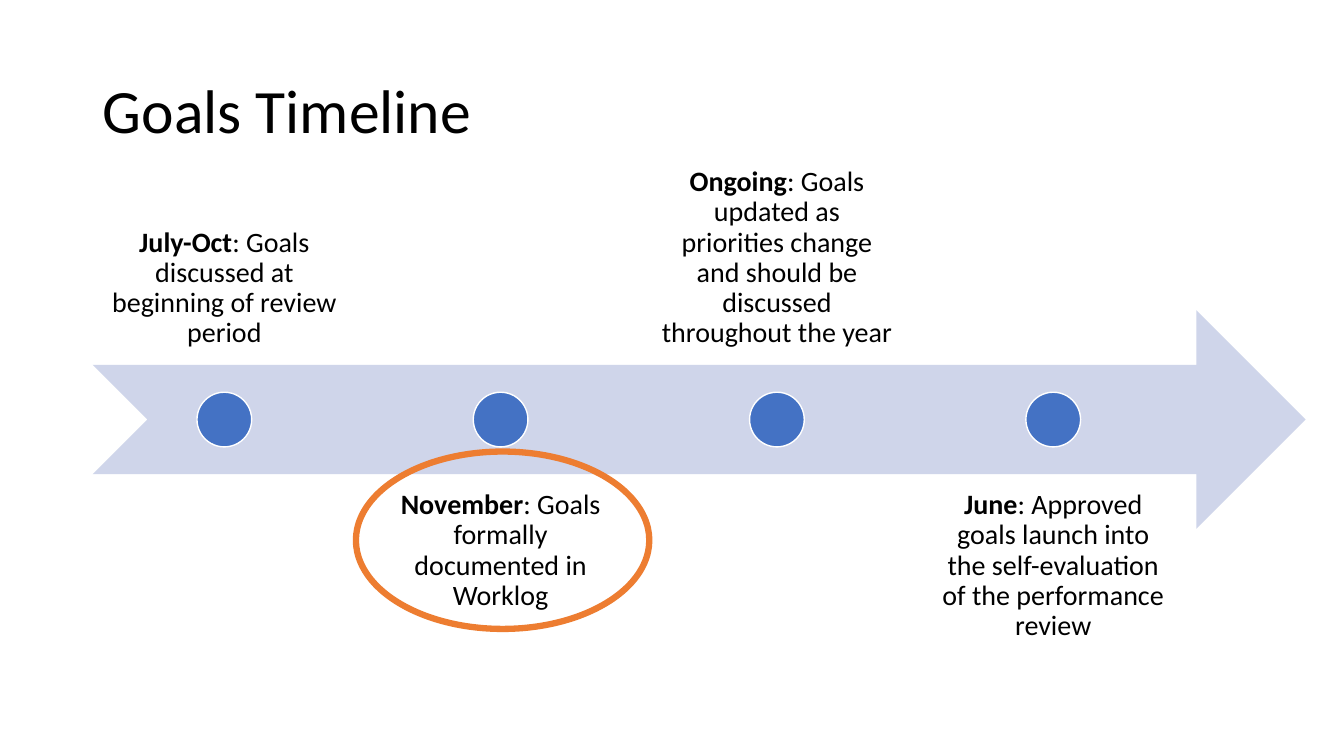
"""Builds the Goals Timeline slide: an arrow with four milestones."""
from pptx import Presentation
from pptx.dml.color import RGBColor
from pptx.enum.shapes import MSO_SHAPE
from pptx.enum.text import MSO_ANCHOR, PP_ALIGN
from pptx.util import Inches, Pt

ARROW, OVAL = MSO_SHAPE.NOTCHED_RIGHT_ARROW, MSO_SHAPE.OVAL
TOP, MIDDLE, BOTTOM = MSO_ANCHOR.TOP, MSO_ANCHOR.MIDDLE, MSO_ANCHOR.BOTTOM
LEFT, CENTER = PP_ALIGN.LEFT, PP_ALIGN.CENTER

COLORS = {"text": "000000", "arrow": "CFD5EA", "dot": "4472C4",
          "dot_line": "FFFFFF", "highlight": "ED7D31"}
FONT = "Calibri"
GRID_X, GRID_Y = 0.92, 1.45
COL_W, ROW_H = 2.61, 2.17
PITCH = COL_W * 1.05
ROW_STEP = ROW_H * 0.75
DOT = ROW_H / 4
INSET = 0.16

MILESTONES = [
    ("July-Oct", ": Goals discussed at beginning of review period"),
    ("November", ": Goals formally documented in Worklog"),
    ("Ongoing", ": Goals updated as priorities change and should be "
                "discussed throughout the year"),
    ("June", ": Approved goals launch into the self-evaluation of the "
             "performance review"),
]


def rgb(name):
    """Return the named colour."""
    return RGBColor.from_string(COLORS[name])


def place(sp, x, y, w, h):
    """Move and size a shape in inches."""
    sp.left, sp.top, sp.width, sp.height = map(Inches, (x, y, w, h))


def write(tf, runs, size, anchor, align):
    """Write (text, bold) runs as one paragraph."""
    tf.word_wrap = True
    tf.vertical_anchor = anchor
    p = tf.paragraphs[0]
    p.alignment = align
    p.line_spacing = 0.9
    for text, bold in runs:
        r = p.add_run()
        r.text = text
        r.font.name = FONT
        r.font.size = Pt(size)
        r.font.bold = bold
        r.font.color.rgb = rgb("text")


def add_title(s, text):
    """Fill and format the title placeholder."""
    sp = s.shapes.title
    place(sp, GRID_X, 0.4, 11.5, 1.45)
    write(sp.text_frame, [(text, False)], 44, MIDDLE, LEFT)


def add_figure(s, kind, box, fill=None, line=None, width=1):
    """Add a preset shape with an optional fill and outline."""
    sp = s.shapes.add_shape(kind, *map(Inches, box))
    sp.shadow.inherit = False
    if fill:
        sp.fill.solid()
        sp.fill.fore_color.rgb = rgb(fill)
    else:
        sp.fill.background()
    if line:
        sp.line.color.rgb = rgb(line)
        sp.line.width = Pt(width)
    else:
        sp.line.fill.background()


def add_milestone(s, col, label, detail):
    """Add a dot with its text, above or below the arrow by turns."""
    x = GRID_X + col * PITCH
    below = col % 2 == 1
    y = GRID_Y + (2 * ROW_STEP if below else 0)
    tb = s.shapes.add_textbox(*map(Inches, (x, y, COL_W, ROW_H)))
    tf = tb.text_frame
    tf.margin_left = tf.margin_right = Inches(INSET)
    tf.margin_top = tf.margin_bottom = Inches(INSET)
    write(tf, [(label, True), (detail, False)], 20,
          TOP if below else BOTTOM, CENTER)
    dot_y = GRID_Y + ROW_STEP + (ROW_H - DOT) / 2
    add_figure(s, OVAL, (x + (COL_W - DOT) / 2, dot_y, DOT, DOT),
               "dot", "dot_line")


def main():
    """Build and save the slide."""
    prs = Presentation()
    prs.slide_width, prs.slide_height = Inches(13.33), Inches(7.5)
    s = prs.slides.add_slide(prs.slide_layouts[5])
    add_title(s, "Goals Timeline")
    add_figure(s, ARROW, (GRID_X, GRID_Y + ROW_STEP, 12.03, ROW_H), "arrow")
    for col, (label, detail) in enumerate(MILESTONES):
        add_milestone(s, col, label, detail)
    add_figure(s, OVAL, (3.53, 4.48, 2.91, 1.76), line="highlight", width=4.5)
    prs.save("out.pptx")


if __name__ == "__main__":
    main()
